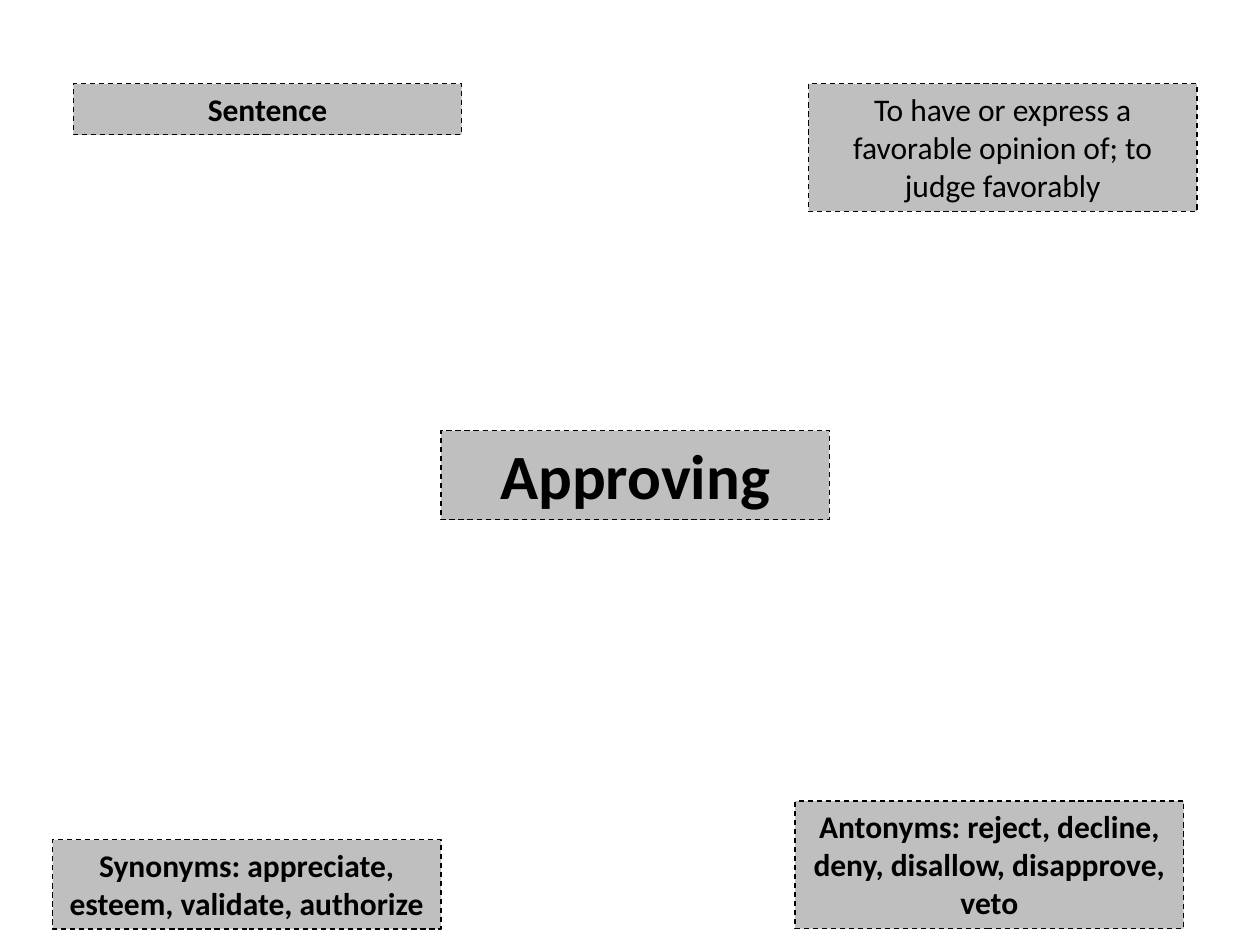
"""Build a vocabulary slide with a central word and four surrounding cards."""
from pptx import Presentation
from pptx.dml.color import RGBColor
from pptx.enum.dml import MSO_LINE
from pptx.enum.text import MSO_ANCHOR, MSO_AUTO_SIZE, PP_ALIGN
from pptx.util import Cm, Pt

DASH = MSO_LINE.DASH
TOP = MSO_ANCHOR.TOP
GROW = MSO_AUTO_SIZE.SHAPE_TO_FIT_TEXT
CENTER = PP_ALIGN.CENTER
CARD_WIDTH = 7.83


def color(value):
    return RGBColor.from_string(value)


deck = Presentation()
deck.slide_width = Cm(25.4)
deck.slide_height = Cm(19.05)
page = deck.slides.add_slide(deck.slide_layouts[6])

cards = [
    ("Approving", 8.89, 8.68, 1.8, 36, True),
    ("Antonyms: reject, decline, deny, disallow, disapprove, veto",
     16.03, 16.15, 2.57, 18, True),
    ("Synonyms: appreciate, esteem, validate, authorize",
     1.06, 16.93, 1.8, 18, True),
    ("To have or express a favorable opinion of; to judge favorably",
     16.3, 1.69, 2.57, 18, False),
    ("Sentence", 1.48, 1.69, 1.03, 18, True),
]

for text, left, top, height, size, bold in cards:
    box = page.shapes.add_textbox(Cm(left), Cm(top), Cm(CARD_WIDTH), Cm(height))
    box.fill.solid()
    box.fill.fore_color.rgb = color("BFBFBF")
    box.line.color.rgb = color("000000")
    box.line.width = Pt(0.75)
    box.line.dash_style = DASH

    frame = box.text_frame
    frame.word_wrap = True
    frame.auto_size = GROW
    frame.vertical_anchor = TOP
    frame.text = text
    para = frame.paragraphs[0]
    para.alignment = CENTER
    span = para.runs[0]
    span.font.name = "Calibri"
    span.font.size = Pt(size)
    span.font.bold = bold
    span.font.color.rgb = color("000000")

deck.save("out.pptx")
